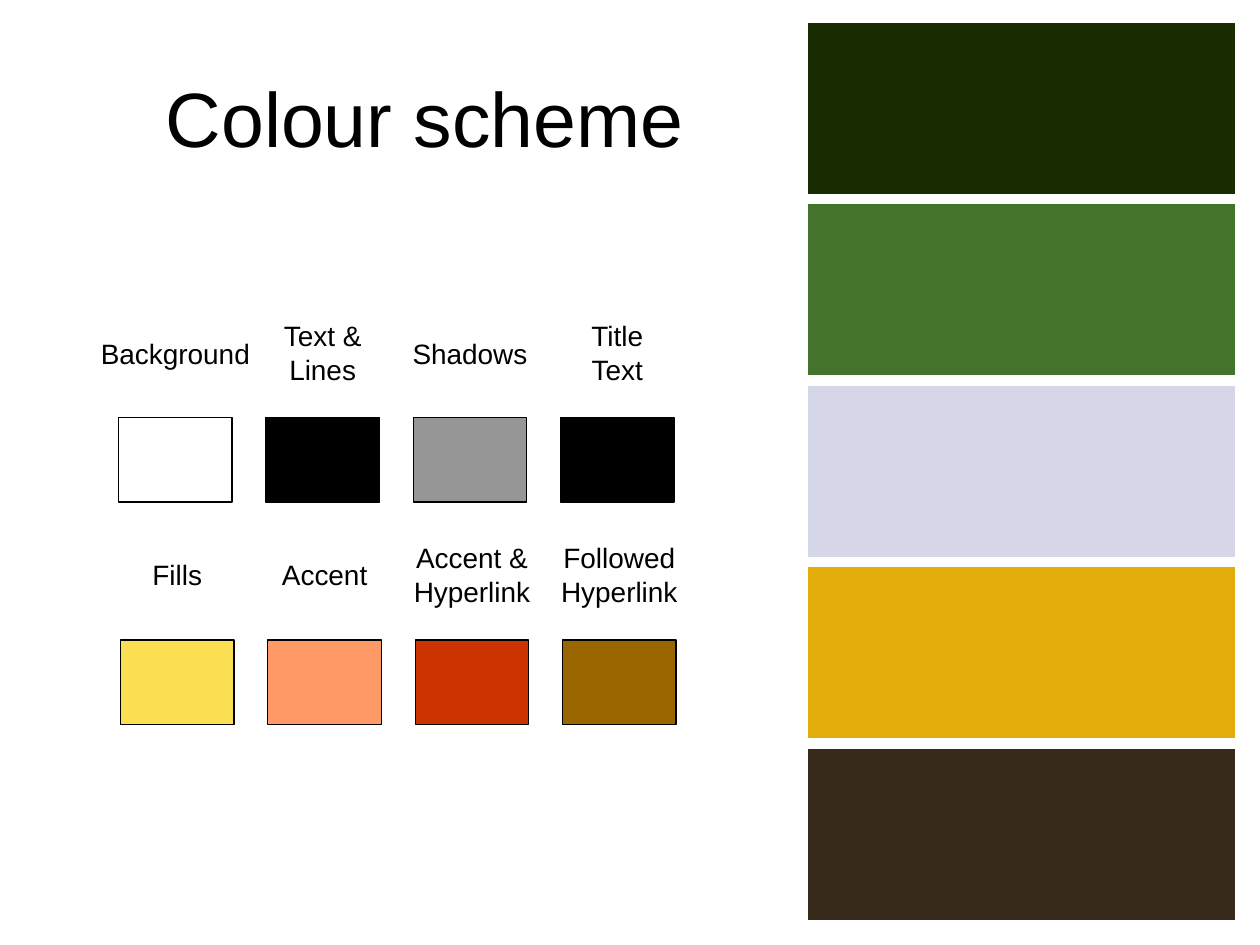
import pptx
import pptx.dml.color
import pptx.enum.shapes
import pptx.enum.text
import pptx.util

Cm = pptx.util.Cm
Pt = pptx.util.Pt


def colour(hex_code):
    return pptx.dml.color.RGBColor.from_string(hex_code)


def write_text(frame, text, *, size, font="Arial", ink="000000"):
    """Fill a frame; a newline starts a paragraph, a vertical tab breaks a line."""
    frame.text = text
    for paragraph in frame.paragraphs:
        paragraph.alignment = pptx.enum.text.PP_ALIGN.CENTER
        for run in paragraph.runs:
            run.font.name = font
            run.font.size = Pt(size)
            run.font.color.rgb = colour(ink)


class SchemeSlide:
    title_size = 44
    label_size = 16
    one_line, two_lines = 0.94, 1.63
    outline = "000000"

    def __init__(self, deck):
        self.slide = deck.slides.add_slide(deck.slide_layouts[6])
        background = self.slide.background.fill
        background.solid()
        background.fore_color.rgb = colour("FFFFFF")

    def block(self, left, top, width, height, fill, line=outline, weight=0.75):
        block = self.slide.shapes.add_shape(
            pptx.enum.shapes.MSO_SHAPE.RECTANGLE,
            Cm(left), Cm(top), Cm(width), Cm(height))
        block.shadow.inherit = False
        block.fill.solid()
        block.fill.fore_color.rgb = colour(fill)
        block.line.color.rgb = colour(line)
        block.line.width = Pt(weight)

    def title(self, text, left, top, width, height):
        heading = self.slide.shapes.add_textbox(
            Cm(left), Cm(top), Cm(width), Cm(height)).text_frame
        heading.word_wrap = True
        heading.vertical_anchor = pptx.enum.text.MSO_ANCHOR.MIDDLE
        write_text(heading, text, size=self.title_size)

    def label(self, text, centre_x, centre_y, width):
        height = self.two_lines if len(text.splitlines()) > 1 else self.one_line
        caption = self.slide.shapes.add_textbox(
            Cm(centre_x - width / 2), Cm(centre_y - height / 2),
            Cm(width), Cm(height)).text_frame
        caption.word_wrap = False
        caption.auto_size = pptx.enum.text.MSO_AUTO_SIZE.SHAPE_TO_FIT_TEXT
        write_text(caption, text, size=self.label_size)


def main():
    deck = pptx.Presentation()
    deck.slide_width, deck.slide_height = Cm(25.4), Cm(19.05)
    scheme = SchemeSlide(deck)

    # Colour bars down the right side, parted by their white outlines
    bar_height = 3.66
    bars = ["192B00", "44732B", "D5D7E9", "E2AC0B", "372A1A"]
    for position, fill in enumerate(bars):
        scheme.block(16.19, 0.35 + position * bar_height, 8.81, bar_height,
                     fill, line="FFFFFF", weight=6)

    # Title
    scheme.title("Colour scheme", 1.34, 0.76, 14.45, 3.18)

    # Swatches, each with a label (text, label width, fill) centred above it
    swatch_width, swatch_height, swatch_pitch = 2.29, 1.7, 2.97
    rows = [
        (2.39, 8.42, 7.12, [
            ("Background", 3.56, "FFFFFF"),
            ("Text &\nLines", 2.16, "000000"),
            ("Shadows", 2.86, "969696"),
            ("Title\vText", 1.64, "000000")]),
        (2.43, 12.9, 11.59, [
            ("Fills", 1.54, "FBDF53"),
            ("Accent", 2.28, "FF9966"),
            ("Accent &\nHyperlink", 2.96, "CC3300"),
            ("Followed\nHyperlink", 2.96, "996600")]),
    ]
    for row_left, swatch_top, label_middle, swatches in rows:
        for column, (name, label_width, fill) in enumerate(swatches):
            left = row_left + column * swatch_pitch
            scheme.block(left, swatch_top, swatch_width, swatch_height, fill)
            scheme.label(name, left + swatch_width / 2, label_middle, label_width)

    deck.save("out.pptx")


if __name__ == "__main__":
    main()
